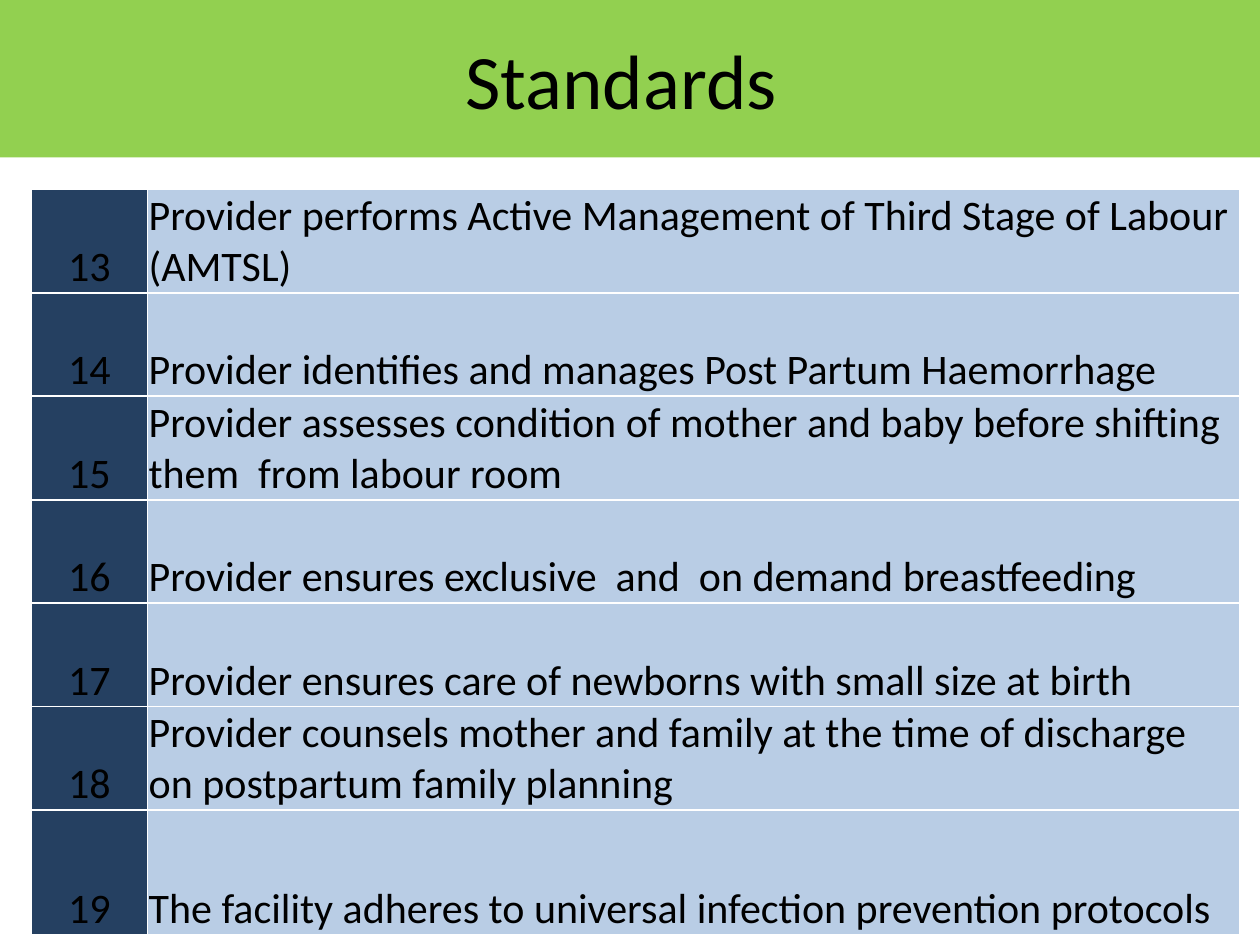
from dataclasses import dataclass

from lxml import etree
from pptx import Presentation
from pptx import util as u
from pptx.dml.color import RGBColor
from pptx.enum import shapes, text
from pptx.oxml import ns
from pptx.slide import Slide

BLACK = RGBColor(0x00, 0x00, 0x00)
WHITE = RGBColor(0xFF, 0xFF, 0xFF)
GREEN = RGBColor(0x92, 0xD0, 0x50)
NAVY = RGBColor(0x25, 0x40, 0x61)
PALE_BLUE = RGBColor(0xB9, 0xCD, 0xE5)

FIRST_NUMBER = 13
STANDARDS = [
    "Provider performs Active Management of Third Stage of Labour (AMTSL)",
    "Provider identifies and manages Post Partum Haemorrhage",
    "Provider assesses condition of mother and baby before shifting them  from labour room",
    "Provider ensures exclusive  and  on demand breastfeeding",
    "Provider ensures care of newborns with small size at birth",
    "Provider counsels mother and family at the time of discharge on postpartum family planning",
    "The facility adheres to universal infection prevention protocols",
]


@dataclass
class StandardsSlide:
    slide: Slide
    font: str = "Calibri"
    title_size: int = 44
    body_size: int = 24

    def add_wording(self, frame, wording, size, align):
        paragraph = frame.paragraphs[0]
        paragraph.alignment = align
        run = paragraph.add_run()
        run.text = wording
        run.font.name = self.font
        run.font.size = u.Pt(size)
        run.font.bold = False
        run.font.color.rgb = BLACK

    def banner(self, wording, left, top, width, height):
        band = self.slide.shapes.add_shape(
            shapes.MSO_SHAPE.RECTANGLE,
            *(u.Inches(length) for length in (left, top, width, height)))
        band.shadow.inherit = False
        band.fill.solid()
        band.fill.fore_color.rgb = GREEN
        band.line.fill.background()
        band.text_frame.vertical_anchor = text.MSO_ANCHOR.MIDDLE
        self.add_wording(band.text_frame, wording, self.title_size, text.PP_ALIGN.CENTER)

    def borders(self, cell):
        properties = cell._tc.get_or_add_tcPr()
        for side in ("a:lnL", "a:lnR", "a:lnT", "a:lnB"):
            line = etree.SubElement(properties, ns.qn(side), w=str(u.Pt(1)))
            solid = etree.SubElement(line, ns.qn("a:solidFill"))
            etree.SubElement(solid, ns.qn("a:srgbClr"), val=str(WHITE))

    def cell(self, cell, wording, fill, align):
        self.borders(cell)
        cell.fill.solid()
        cell.fill.fore_color.rgb = fill
        cell.vertical_anchor = text.MSO_ANCHOR.BOTTOM
        cell.margin_left = cell.margin_top = cell.margin_right = u.Inches(0.01)
        cell.margin_bottom = u.Inches(0)
        self.add_wording(cell.text_frame, wording, self.body_size, align)

    def numbered_table(self, entries, first, left, top, widths, heights):
        grid = self.slide.shapes.add_table(
            len(entries), len(widths), u.Inches(left), u.Inches(top),
            u.Inches(sum(widths)), u.Inches(sum(heights))).table
        for column, width in zip(grid.columns, widths):
            column.width = u.Inches(width)
        for row, height in zip(grid.rows, heights):
            row.height = u.Inches(height)
        for index, entry in enumerate(entries):
            self.cell(grid.cell(index, 0), str(first + index), NAVY, text.PP_ALIGN.CENTER)
            self.cell(grid.cell(index, 1), entry, PALE_BLUE, text.PP_ALIGN.LEFT)


def main():
    deck = Presentation()
    deck.slide_width, deck.slide_height = u.Inches(10), u.Inches(7.5)
    page = StandardsSlide(deck.slides.add_slide(deck.slide_layouts[6]))

    # Numbered standards; the last row is taller
    heights = [0.82] * (len(STANDARDS) - 1) + [0.99]
    page.numbered_table(STANDARDS, FIRST_NUMBER, 0.25, 1.5, (0.92, 8.67), heights)

    # Title band
    page.banner("Standards ", 0, 0, 10, 1.25)

    deck.save("out.pptx")


if __name__ == "__main__":
    main()
